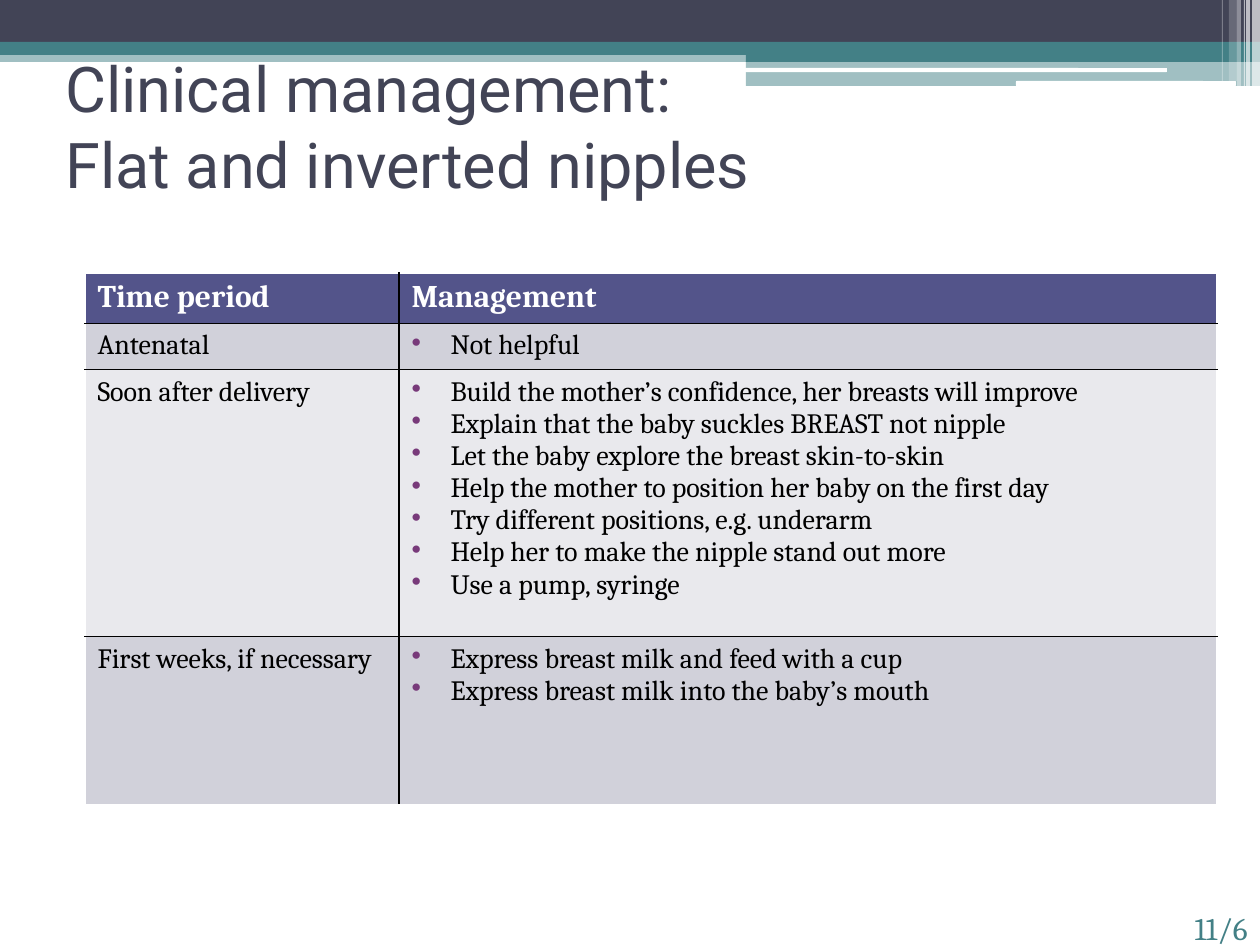
import pptx
import pptx.util
import pptx.dml.color
import pptx.enum.shapes
import pptx.enum.text
import pptx.oxml.ns
import lxml.etree

RGBColor = pptx.dml.color.RGBColor
SHAPES = pptx.enum.shapes.MSO_SHAPE
ALIGN = pptx.enum.text.PP_ALIGN
ANCHOR = pptx.enum.text.MSO_ANCHOR

PX = 914400 / 126
WHITE = RGBColor(0xFF, 0xFF, 0xFF)
BLACK = RGBColor(0x00, 0x00, 0x00)
NAVY = RGBColor(0x42, 0x44, 0x56)
TEAL = RGBColor(0x43, 0x80, 0x86)
PURPLE = RGBColor(0x53, 0x54, 0x8A)
PLUM = RGBColor(0x78, 0x3A, 0x7A)
GREY = RGBColor(0xD1, 0xD1, 0xDA)
PALE = RGBColor(0xE9, 0xE9, 0xED)

BANDS = [
    (0, 50, 1260, 12, TEAL, 50),
    (0, 0, 1260, 42, NAVY, 100),
    (0, 42, 1260, 13, TEAL, 100),
    (746, 49, 514, 13, TEAL, 100),
    (746, 61, 514, 25, TEAL, 50),
]
HIGHLIGHTS = [(745, 68, 422, 4), (1016, 81, 220, 5)]
STRIPES = [
    (1252, 8, 86, 65),
    (1246, 4, 86, 65),
    (1244, 1, 86, 60),
    (1237, 4, 86, 40),
    (1229, 8, 81, 20),
    (1222, 1, 81, 30),
]
COLUMN_WIDTHS = [314, 818]
ROW_HEIGHTS = [48, 45, 267, 168]
ROW_FILLS = [PURPLE, GREY, PALE, GREY]
ROWS = [
    ("Time period", ["Management"]),
    ("Antenatal", ["Not helpful"]),
    ("Soon after delivery", [
        "Build the mother’s confidence, her breasts will improve",
        "Explain that the baby suckles BREAST not nipple",
        "Let the baby explore the breast skin-to-skin",
        "Help the mother to position her baby on the first day",
        "Try different positions, e.g. underarm",
        "Help her to make the nipple stand out more",
        "Use a pump, syringe",
    ]),
    ("First weeks, if necessary", [
        "Express breast milk and feed with a cup",
        "Express breast milk into the baby’s mouth",
    ]),
]


def px(value):
    return round(value * PX)


def add_element(parent, tag, **attributes):
    element = lxml.etree.SubElement(parent, pptx.oxml.ns.qn(tag))
    for name, value in attributes.items():
        element.set(name, str(value))
    return element


def add_bar(slide, left, top, width, height, color, opacity=100, kind=SHAPES.RECTANGLE):
    shape = slide.shapes.add_shape(kind, px(left), px(top), px(width), px(height))
    shape.shadow.inherit = False
    shape.line.fill.background()
    shape.fill.solid()
    shape.fill.fore_color.rgb = color
    if opacity < 100:
        color_element = shape.fill._xPr.find(".//" + pptx.oxml.ns.qn("a:srgbClr"))
        add_element(color_element, "a:alpha", val=opacity * 1000)


def format_runs(text_frame, font, size, color, bold=False):
    for paragraph in text_frame.paragraphs:
        for run in paragraph.runs:
            run.font.name = font
            run.font.size = pptx.util.Pt(size)
            run.font.color.rgb = color
            run.font.bold = bold


def add_text(slide, left, top, width, height, text, font, size, color,
             anchor=ANCHOR.TOP, align=ALIGN.LEFT):
    box = slide.shapes.add_textbox(px(left), px(top), px(width), px(height))
    text_frame = box.text_frame
    text_frame.word_wrap = True
    text_frame.vertical_anchor = anchor
    text_frame.text = text
    text_frame.paragraphs[0].alignment = align
    format_runs(text_frame, font, size, color)


def add_bullet(paragraph):
    properties = paragraph._p.get_or_add_pPr()
    properties.set("marL", str(px(39)))
    properties.set("indent", str(-px(39)))
    bullet_color = add_element(properties, "a:buClr")
    add_element(bullet_color, "a:srgbClr", val=PLUM)
    add_element(properties, "a:buChar", char="•")


def set_borders(cell, row, column):
    inner_edges = {
        "a:lnL": column > 0,
        "a:lnR": column < len(COLUMN_WIDTHS) - 1,
        "a:lnT": row > 0,
        "a:lnB": row < len(ROWS) - 1,
    }
    properties = cell._tc.get_or_add_tcPr()
    for tag, inner in inner_edges.items():
        line = add_element(properties, tag, w=pptx.util.Pt(1))
        fill = add_element(line, "a:solidFill")
        add_element(fill, "a:srgbClr", val=BLACK if inner else WHITE)


def fill_cell(cell, row, column, lines):
    header = row == 0
    set_borders(cell, row, column)
    cell.fill.solid()
    cell.fill.fore_color.rgb = ROW_FILLS[row]
    cell.text_frame.text = "\n".join(lines)
    if column == 1 and not header:
        for paragraph in cell.text_frame.paragraphs:
            add_bullet(paragraph)
    format_runs(cell.text_frame, "Cambria", 18 if header else 16,
                WHITE if header else BLACK, header)


def add_management_table(slide):
    frame = slide.shapes.add_table(
        len(ROWS), len(COLUMN_WIDTHS), px(85), px(273),
        px(sum(COLUMN_WIDTHS)), px(sum(ROW_HEIGHTS)))
    table = frame.table
    for column, width in enumerate(COLUMN_WIDTHS):
        table.columns[column].width = px(width)
    for row, (period, actions) in enumerate(ROWS):
        table.rows[row].height = px(ROW_HEIGHTS[row])
        fill_cell(table.cell(row, 0), row, 0, [period])
        fill_cell(table.cell(row, 1), row, 1, actions)


def add_banner(slide):
    for band in BANDS:
        add_bar(slide, *band)
    for highlight in HIGHLIGHTS:
        add_bar(slide, *highlight, WHITE, kind=SHAPES.ROUNDED_RECTANGLE)
    for left, width, height, opacity in STRIPES:
        add_bar(slide, left, 0, width, height, WHITE, opacity)


def main():
    presentation = pptx.Presentation()
    presentation.slide_width = px(1260)
    presentation.slide_height = px(945)
    slide = presentation.slides.add_slide(presentation.slide_layouts[6])
    add_banner(slide)
    add_text(slide, 53, 73, 1134, 105, "Clinical management:\vFlat and inverted nipples",
             "Roboto", 36, NAVY, anchor=ANCHOR.MIDDLE)
    add_management_table(slide)
    add_text(slide, 1081, 903, 179, 42, "11/6", "Cambria", 18, TEAL, align=ALIGN.RIGHT)
    presentation.save("out.pptx")


if __name__ == "__main__":
    main()
